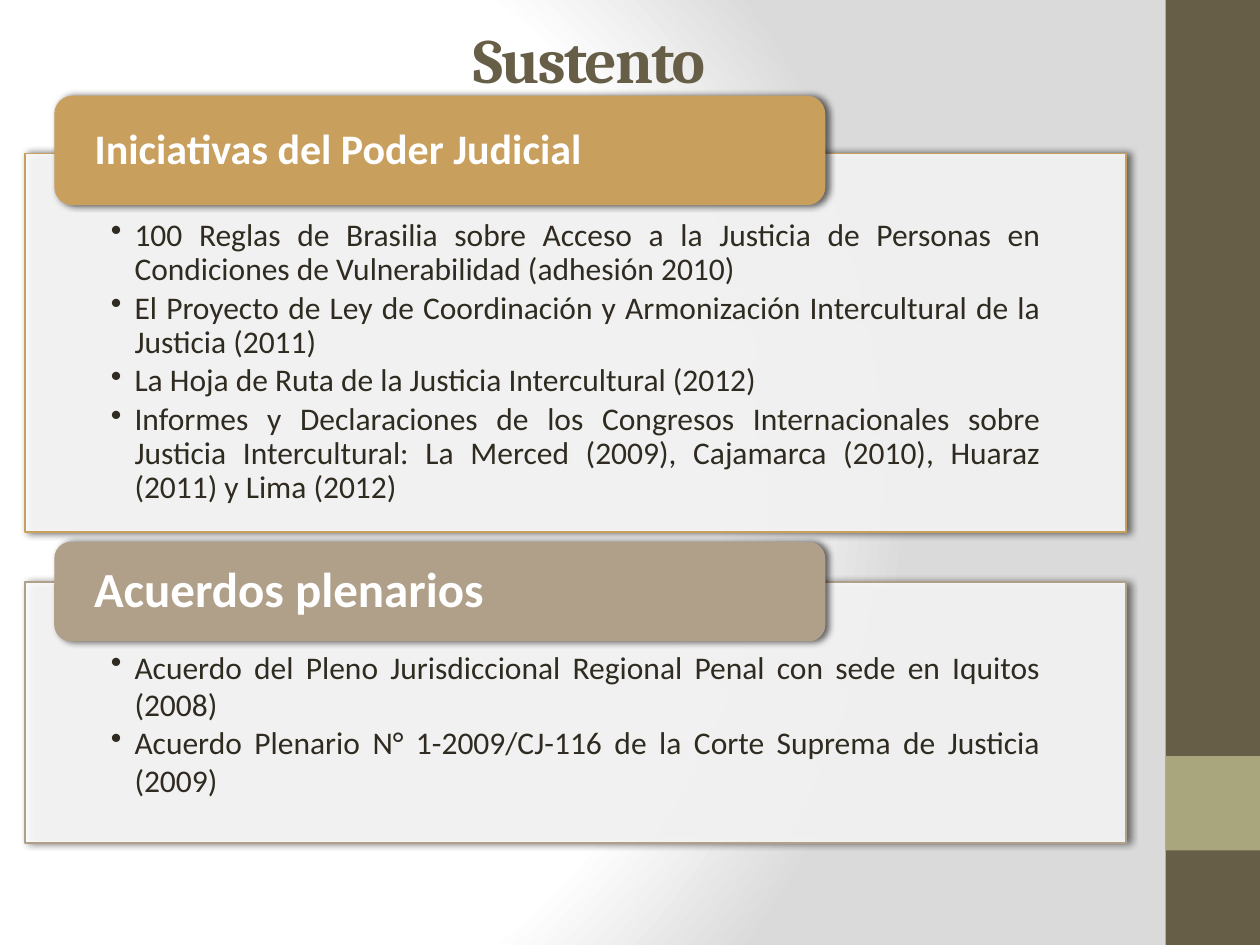
import pptx
import pptx.dml.color
import pptx.enum.shapes
import pptx.enum.text
import pptx.oxml
import pptx.oxml.ns
import pptx.util

Pt = pptx.util.Pt
SHAPE = pptx.enum.shapes.MSO_SHAPE
ALIGN = pptx.enum.text.PP_ALIGN
ANCHOR = pptx.enum.text.MSO_ANCHOR
NAMESPACES = pptx.oxml.ns.nsdecls("a", "p")


def color(value):
    return pptx.dml.color.RGBColor.from_string(value)


class SlideBuilder:
    """Holds the style and the current slide and adds each kind of element."""

    heading_font, body_font = "Cambria", "Calibri"
    brown, olive, ink, white, gray = "675E47", "A9A57C", "2F2B20", "FFFFFF", "DADADA"

    def __init__(self, slide):
        self.slide = slide

    def background(self):
        stops = "".join(
            f'<a:gs pos="{position}"><a:srgbClr val="{value}"/></a:gs>'
            for position, value in ((0, self.white), (75000, self.white), (100000, self.gray))
        )
        self.slide.element.cSld.insert(0, pptx.oxml.parse_xml(
            f'<p:bg {NAMESPACES}><p:bgPr><a:gradFill rotWithShape="1"><a:gsLst>{stops}</a:gsLst>'
            '<a:path path="circle"><a:fillToRect l="20000" t="50000" r="100000" b="50000"/></a:path>'
            "</a:gradFill><a:effectLst/></p:bgPr></p:bg>"
        ))

    def font(self, paragraph, name, size, value, bold=False):
        font = paragraph.font
        font.name, font.size, font.bold = name, Pt(size), bold
        font.color.rgb = color(value)
        return font

    def title(self, text, left, top, width, height):
        title = self.slide.shapes.title
        title.left, title.top, title.width, title.height = map(Pt, (left, top, width, height))
        frame = title.text_frame
        frame.text = text
        frame.vertical_anchor = ANCHOR.MIDDLE
        paragraph = frame.paragraphs[0]
        paragraph.alignment = ALIGN.CENTER
        self.font(paragraph, self.heading_font, 36, self.brown, True)._element.set("spc", "-100")

    def block(self, kind, left, top, width, height, fill, line=None):
        shape = self.slide.shapes.add_shape(kind, *map(Pt, (left, top, width, height)))
        shape.shadow.inherit = False
        shape.fill.solid()
        shape.fill.fore_color.rgb = color(fill)
        if line:
            shape.line.color.rgb = color(line)
            shape.line.width = Pt(1)
        else:
            shape.line.fill.background()
        return shape

    def cast_shadow(self, shape):
        effects = shape._element.spPr.find(pptx.oxml.ns.qn("a:effectLst"))
        effects.append(pptx.oxml.parse_xml(
            f'<a:outerShdw {NAMESPACES} blurRad="{Pt(4)}" dist="{Pt(2)}" dir="0" rotWithShape="0">'
            '<a:srgbClr val="000000"><a:alpha val="60000"/></a:srgbClr></a:outerShdw>'
        ))

    def frame(self, shape, anchor, left, top, right, bottom):
        frame = shape.text_frame
        frame.word_wrap = True
        frame.vertical_anchor = anchor
        frame.margin_left, frame.margin_top = Pt(left), Pt(top)
        frame.margin_right, frame.margin_bottom = Pt(right), Pt(bottom)
        return frame

    def panel(self, top, height, accent, items, spacing, after):
        shape = self.block(SHAPE.RECTANGLE, 14.4, top, 629.3, height, self.white, accent)
        fill = shape._element.spPr.find(".//" + pptx.oxml.ns.qn("a:srgbClr"))
        fill.append(pptx.oxml.parse_xml(f'<a:alpha {NAMESPACES} val="90000"/>'))
        self.cast_shadow(shape)
        frame = self.frame(shape, ANCHOR.TOP, 49, 37.5, 49, 10)
        frame.text = "\n".join(items)
        for paragraph in frame.paragraphs:
            paragraph.alignment = ALIGN.JUSTIFY
            paragraph.level = 1
            paragraph.line_spacing = spacing
            paragraph.space_after = Pt(after)
            font = self.font(paragraph, self.body_font, 18, self.ink)
            font._element.addprevious(pptx.oxml.parse_xml(f'<a:buChar {NAMESPACES} char="•"/>'))
            properties = font._element.getparent()
            properties.set("marL", str(Pt(13.5)))
            properties.set("indent", str(Pt(-13.5)))

    def header(self, top, height, accent, text, size):
        shape = self.block(SHAPE.ROUNDED_RECTANGLE, 31, top, 440.6, height, accent)
        self.cast_shadow(shape)
        frame = self.frame(shape, ANCHOR.MIDDLE, 20, 0, 20, 0)
        frame.text = text
        paragraph = frame.paragraphs[0]
        paragraph.alignment = ALIGN.LEFT
        paragraph.line_spacing = 0.9
        self.font(paragraph, self.body_font, size, self.white, True)


def main():
    presentation = pptx.Presentation()
    presentation.slide_width, presentation.slide_height = Pt(720), Pt(540)
    builder = SlideBuilder(presentation.slides.add_slide(presentation.slide_layouts[5]))
    builder.background()
    builder.block(SHAPE.RECTANGLE, 666, 0, 54, 540, builder.brown)
    builder.block(SHAPE.RECTANGLE, 666, 432, 54, 54, builder.olive)
    builder.title("Sustento", 36.7, 9.4, 599.8, 47.5)

    gold, taupe = "C89F5D", "B1A089"
    builder.panel(87.8, 216.4, gold, [
        "100 Reglas de Brasilia sobre Acceso a la Justicia de Personas en Condiciones de Vulnerabilidad (adhesión 2010)",
        "El Proyecto de Ley de Coordinación y Armonización Intercultural de la Justicia (2011)",
        "La Hoja de Ruta de la Justicia Intercultural (2012)",
        "Informes y Declaraciones de los Congresos Internacionales sobre Justicia Intercultural: "
        "La Merced (2009), Cajamarca (2010), Huaraz (2011) y Lima (2012)",
    ], 0.9, 2.7)
    builder.header(54.7, 62.6, gold, "Iniciativas del Poder Judicial", 24)
    builder.panel(332.6, 149, taupe, [
        "Acuerdo del Pleno Jurisdiccional Regional Penal con sede en Iquitos (2008)",
        "Acuerdo Plenario N° 1-2009/CJ-116 de la Corte Suprema de Justicia (2009)",
    ], 1.0, 0)
    builder.header(309.6, 56.9, taupe, "Acuerdos plenarios", 28)
    presentation.save("out.pptx")


if __name__ == "__main__":
    main()
